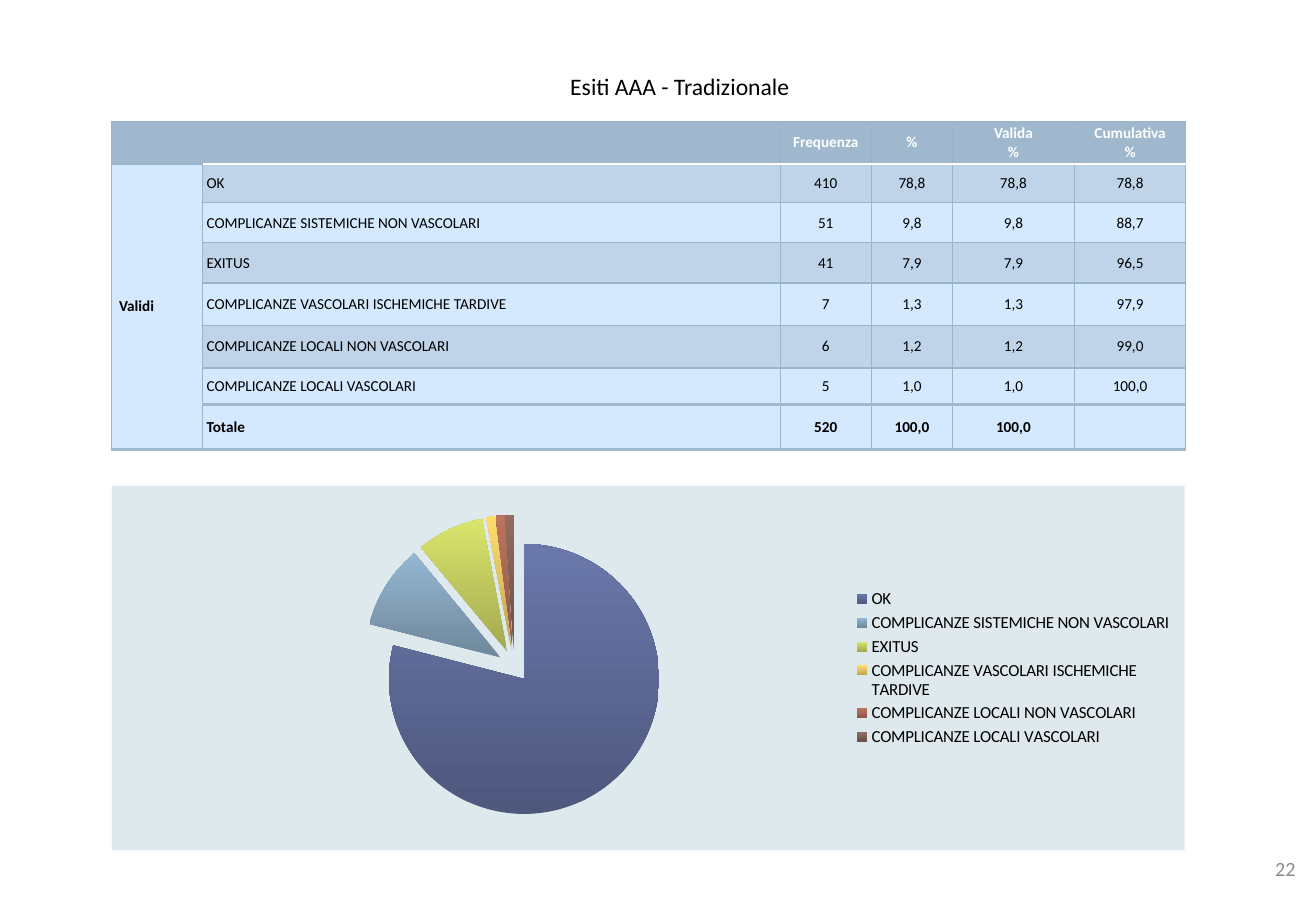
import pptx
import pptx.chart.data
import pptx.dml.color
import pptx.enum.chart
import pptx.enum.text
import pptx.oxml
import pptx.oxml.ns
import pptx.util

Inches = pptx.util.Inches
Pt = pptx.util.Pt
RGBColor = pptx.dml.color.RGBColor
qn = pptx.oxml.ns.qn
nsdecls = pptx.oxml.ns.nsdecls
ALIGN = pptx.enum.text.PP_ALIGN
MIDDLE = pptx.enum.text.MSO_ANCHOR.MIDDLE

BLACK = RGBColor(0x00, 0x00, 0x00)
WHITE = RGBColor(0xFF, 0xFF, 0xFF)
GREY = RGBColor(0x8C, 0x8C, 0x8C)
HEADER = RGBColor(0x9F, 0xB8, 0xCD)
BAND = RGBColor(0xBF, 0xD4, 0xE9)
PALE = RGBColor(0xD4, 0xE9, 0xFD)
GRID = RGBColor(0x9A, 0xB4, 0xCA)
PANEL = RGBColor(0xDD, 0xE9, 0xEC)
SLICES = [
    RGBColor(0x6A, 0x77, 0xAA), RGBColor(0x95, 0xB7, 0xD2),
    RGBColor(0xDA, 0xE5, 0x6C), RGBColor(0xFF, 0xDE, 0x6E),
    RGBColor(0xBE, 0x74, 0x5E), RGBColor(0x92, 0x6C, 0x60),
]

OUTCOMES = [
    ("OK", "410", "78,8", "78,8", "78,8"),
    ("COMPLICANZE SISTEMICHE NON VASCOLARI", "51", "9,8", "9,8", "88,7"),
    ("EXITUS", "41", "7,9", "7,9", "96,5"),
    ("COMPLICANZE VASCOLARI ISCHEMICHE TARDIVE", "7", "1,3", "1,3", "97,9"),
    ("COMPLICANZE LOCALI NON VASCOLARI", "6", "1,2", "1,2", "99,0"),
    ("COMPLICANZE LOCALI VASCOLARI", "5", "1,0", "1,0", "100,0"),
]
SHARES = [79, 10, 8, 1, 1, 1]


def write_text(frame, text, align, **font):
    frame.text = text
    for para in frame.paragraphs:
        para.alignment = align
        for span in para.runs:
            span.font.name = "Calibri"
            span.font.color.rgb = font["color"]
            for name in ("size", "bold"):
                setattr(span.font, name, font[name])


def draw_borders(cell, borders):
    """Add the cell's lines, given as (colour, points) in the order L, R, T, B."""
    for place, (side, (color, width)) in enumerate(zip("LRTB", borders)):
        line = pptx.oxml.parse_xml(
            f'<a:ln{side} {nsdecls("a")} w="{Pt(width)}"><a:solidFill>'
            f'<a:srgbClr val="{color}"/></a:solidFill></a:ln{side}>')
        cell._tc.get_or_add_tcPr().insert(place, line)


deck = pptx.Presentation()
deck.slide_width, deck.slide_height = Inches(10.83), Inches(7.5)
page = deck.slides.add_slide(deck.slide_layouts[6])

# Title and page number
for text, place, align, size, color in [
    ("Esiti AAA - Tradizionale", (0.72, 0.51, 9.75, 0.4), ALIGN.CENTER, 14, BLACK),
    ("22", (9.88, 6.95, 0.88, 0.4), ALIGN.RIGHT, 12, GREY),
]:
    box = page.shapes.add_textbox(*map(Inches, place))
    box.text_frame.word_wrap = True
    box.text_frame.vertical_anchor = MIDDLE
    write_text(box.text_frame, text, align, size=Pt(size), bold=False, color=color)

# Frequency table
widths = [0.75, 4.75, 0.75, 0.67, 1, 0.92]
heights = [0.35, 0.32, 0.33, 0.33, 0.35, 0.35, 0.3, 0.37]
rows = [("", "", "Frequenza", "%", "Valida\n%", "Cumulativa\n%")]
rows += [("", *outcome) for outcome in OUTCOMES]
rows += [("", "Totale", "520", "100,0", "100,0", "")]
last = len(rows) - 1
table = page.shapes.add_table(
    len(rows), len(widths), *map(Inches, (0.92, 1, 8.83, 2.7))).table
for column, width in zip(table.columns, widths):
    column.width = Inches(width)
for row, height in zip(table.rows, heights):
    row.height = Inches(height)
table.cell(0, 0).merge(table.cell(0, 1))
table.cell(1, 0).merge(table.cell(last, 0))

thin, white_rule, blue_rule = (GRID, 0.75), (WHITE, 2), (HEADER, 2)
for r, values in enumerate(rows):
    for c, value in enumerate(values):
        cell = table.cell(r, c)
        if (r, c) == (1, 0):
            value = "Validi"
        if r == 0:
            fill, inset_x, inset_y = HEADER, 0.01, 0
        elif c == 0:
            fill, inset_x, inset_y = PALE, 0.06, 0
        else:
            fill, inset_x, inset_y = BAND if r % 2 and r < last else PALE, 0.03, 0.03
        for name, value_set in {
            "vertical_anchor": MIDDLE,
            "margin_left": Inches(inset_x), "margin_right": Inches(inset_x),
            "margin_top": Inches(inset_y), "margin_bottom": Inches(inset_y),
        }.items():
            setattr(cell, name, value_set)
        cell.fill.solid()
        cell.fill.fore_color.rgb = fill
        write_text(cell.text_frame, value,
                   ALIGN.CENTER if c > 1 else ALIGN.LEFT, size=Pt(9),
                   bold=r in (0, last) or c == 0, color=WHITE if r == 0 else BLACK)
        top = bottom = thin
        if c > 0:
            top = {1: white_rule, last: blue_rule}.get(r, thin)
            bottom = {0: white_rule, last - 1: blue_rule}.get(r, thin)
        if r == last or (r, c) == (1, 0):
            bottom = blue_rule
        draw_borders(cell, (thin, thin, top, bottom))

# Pie chart
data = pptx.chart.data.CategoryChartData()
data.categories = [outcome[0] for outcome in OUTCOMES]
data.add_series("Series 1", SHARES)
chart = page.shapes.add_chart(
    pptx.enum.chart.XL_CHART_TYPE.PIE, *map(Inches, (0.92, 4, 8.83, 3)), data).chart
chart.has_title = False
chart.has_legend = True
chart.legend.position = pptx.enum.chart.XL_LEGEND_POSITION.RIGHT
chart.legend.include_in_layout = False
for font in (chart.font, chart.legend.font):
    font.name, font.size = "Calibri", Pt(10)
    font.color.rgb = BLACK

chart._chartSpace.find(qn("c:txPr")).addprevious(pptx.oxml.parse_xml(
    f'<c:spPr {nsdecls("c", "a")}><a:solidFill><a:srgbClr val="{PANEL}"/>'
    '</a:solidFill><a:ln><a:noFill/></a:ln></c:spPr>'))
plot_area = chart._chartSpace.chart.plotArea
for layout in plot_area.findall(qn("c:layout")):
    plot_area.remove(layout)
plot_area.insert(0, pptx.oxml.parse_xml(
    f'<c:layout {nsdecls("c")}><c:manualLayout><c:layoutTarget val="inner"/>'
    '<c:xMode val="edge"/><c:yMode val="edge"/><c:x val="0"/><c:y val="0.08"/>'
    '<c:w val="0.75"/><c:h val="0.83"/></c:manualLayout></c:layout>'))

plot = chart.plots[0]
plot.vary_by_categories = True
series = plot.series[0]
series._element.find(qn("c:cat")).addprevious(
    pptx.oxml.parse_xml(f'<c:explosion {nsdecls("c")} val="12"/>'))
for index, color in enumerate(SLICES):
    fill = series.points[index].format.fill
    fill.gradient()
    fill.gradient_angle = 90
    shade = RGBColor(*(int(part * 0.74) for part in color))
    for stop, tone in zip(fill.gradient_stops, (shade, color)):
        stop.color.rgb = tone

deck.save("out.pptx")
